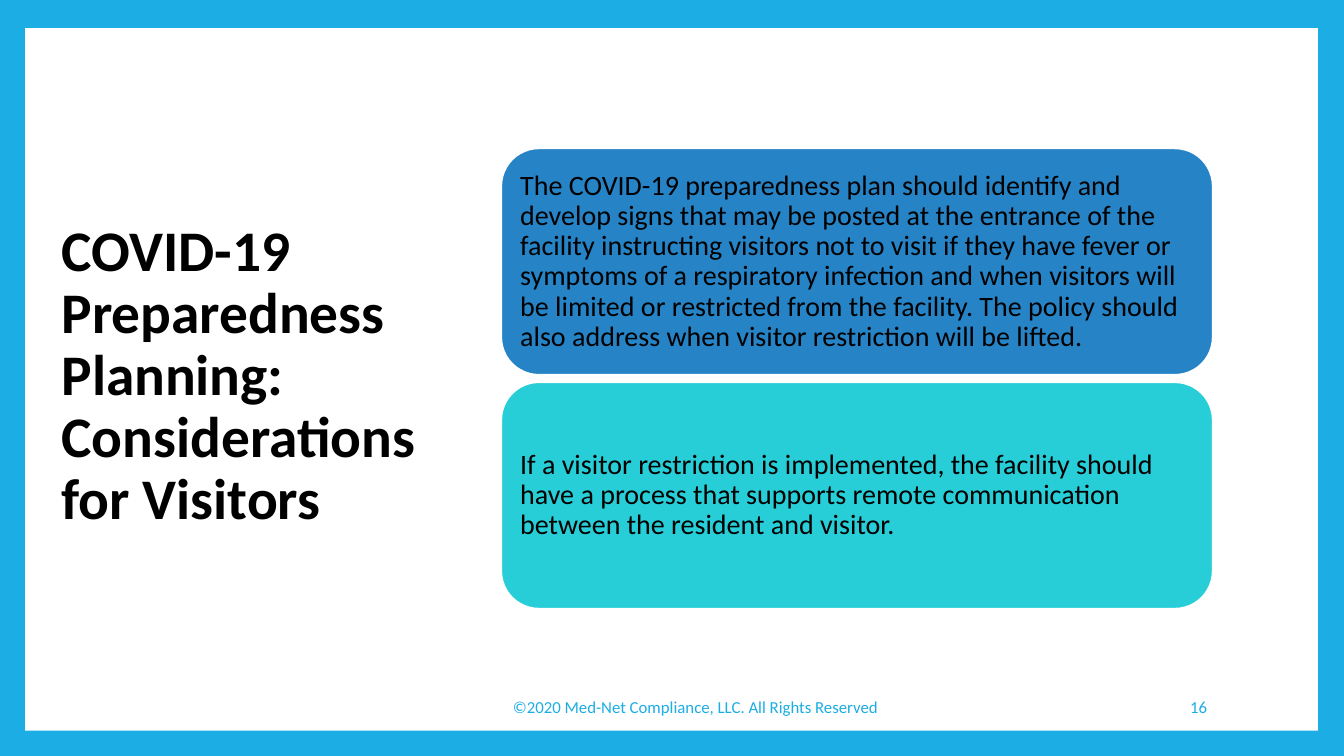
from dataclasses import dataclass

from pptx import Presentation
from pptx.dml.color import RGBColor
from pptx.enum.shapes import MSO_SHAPE
from pptx.enum.text import MSO_ANCHOR, PP_ALIGN
from pptx.util import Inches, Pt

RECT = MSO_SHAPE.RECTANGLE
ROUNDED = MSO_SHAPE.ROUNDED_RECTANGLE
MIDDLE = MSO_ANCHOR.MIDDLE
LEFT, CENTER, RIGHT = PP_ALIGN.LEFT, PP_ALIGN.CENTER, PP_ALIGN.RIGHT
TITLE_ONLY = 5


@dataclass(frozen=True)
class Theme:
    font: str = "Calibri"
    accent: RGBColor = RGBColor(0x1C, 0xAD, 0xE4)
    blue: RGBColor = RGBColor(0x26, 0x83, 0xC6)
    teal: RGBColor = RGBColor(0x27, 0xCE, 0xD7)
    paper: RGBColor = RGBColor(0xFF, 0xFF, 0xFF)
    ink: RGBColor = RGBColor(0, 0, 0)
    title_size: int = 41
    body_size: int = 20
    footer_size: int = 12


THEME = Theme()

TITLE = "COVID-19 Preparedness Planning: \vConsiderations for Visitors"
CARDS = [
    ("The COVID-19 preparedness plan should identify and develop signs that "
     "may be posted at the entrance of the facility instructing visitors not "
     "to visit if they have fever or symptoms of a respiratory infection and "
     "when visitors will be limited or restricted from the facility. The "
     "policy should also address when visitor restriction will be lifted.",
     THEME.blue),
    ("If a visitor restriction is implemented, the facility should have a "
     "process that supports remote communication between the resident and "
     "visitor.", THEME.teal),
]
FOOTER = "©2020 Med-Net Compliance, LLC. All Rights Reserved"
SLIDE_NUMBER = "16"


def inches(*lengths):
    return [Inches(n) for n in lengths]


def write(tf, text, size, color, align=LEFT, bold=False, line_spacing=None):
    """Fill a text frame with one formatted, vertically centred paragraph."""
    tf.word_wrap = True
    tf.vertical_anchor = MIDDLE
    p = tf.paragraphs[0]
    p.text = text
    p.alignment = align
    p.line_spacing = line_spacing
    for r in p.runs:
        r.font.name = THEME.font
        r.font.size = Pt(size)
        r.font.bold = bold
        r.font.color.rgb = color


def add_panel(slide, kind, box, fill):
    sp = slide.shapes.add_shape(kind, *inches(*box))
    sp.shadow.inherit = False
    sp.fill.solid()
    sp.fill.fore_color.rgb = fill
    sp.line.fill.background()
    return sp


def add_frame(slide, box):
    """Colour the slide background and lay the white page over it."""
    slide.background.fill.solid()
    slide.background.fill.fore_color.rgb = THEME.accent
    add_panel(slide, RECT, box, THEME.paper)


def place_title(slide, box):
    title = slide.shapes.title
    title.left, title.top, title.width, title.height = inches(*box)
    write(title.text_frame, TITLE, THEME.title_size, THEME.ink,
          bold=True, line_spacing=0.9)


def add_cards(slide, box, gap=0.07):
    """Stack the cards at equal heights inside the box."""
    left, top, width, height = box
    card_height = (height - gap * (len(CARDS) - 1)) / len(CARDS)
    for i, (text, fill) in enumerate(CARDS):
        card_top = top + i * (card_height + gap)
        sp = add_panel(slide, ROUNDED, (left, card_top, width, card_height), fill)
        sp.line.color.rgb = THEME.paper
        sp.line.width = Pt(1.5)
        tf = sp.text_frame
        tf.margin_left = tf.margin_right = Inches(0.08)
        tf.margin_top = tf.margin_bottom = Inches(0.08)
        write(tf, text, THEME.body_size, THEME.ink, line_spacing=0.9)


def add_footer(slide, box):
    """Put the copyright line at the left of the box and the number at its right."""
    left, top, width, height = box
    notice_width, number_width = 5.16, 1.87
    for text, x, w, align in (
        (FOOTER, left, notice_width, CENTER),
        (SLIDE_NUMBER, left + width - number_width, number_width, RIGHT),
    ):
        tb = slide.shapes.add_textbox(*inches(x, top, w, height))
        write(tb.text_frame, text, THEME.footer_size, THEME.accent, align)


def main():
    prs = Presentation()
    prs.slide_width, prs.slide_height = inches(13.33, 7.5)
    slide = prs.slides.add_slide(prs.slide_layouts[TITLE_ONLY])
    add_frame(slide, (0.25, 0.28, 12.82, 6.97))
    place_title(slide, (0.51, 0.67, 3.89, 6.13))
    add_cards(slide, (4.97, 1.47, 7.06, 4.57))
    add_footer(slide, (4.32, 6.81, 7.75, 0.4))
    # The title placeholder comes first in the tree, so bring it above the page.
    tree = slide.shapes.title.element.getparent()
    tree.append(slide.shapes.title.element)
    prs.save("out.pptx")


if __name__ == "__main__":
    main()
